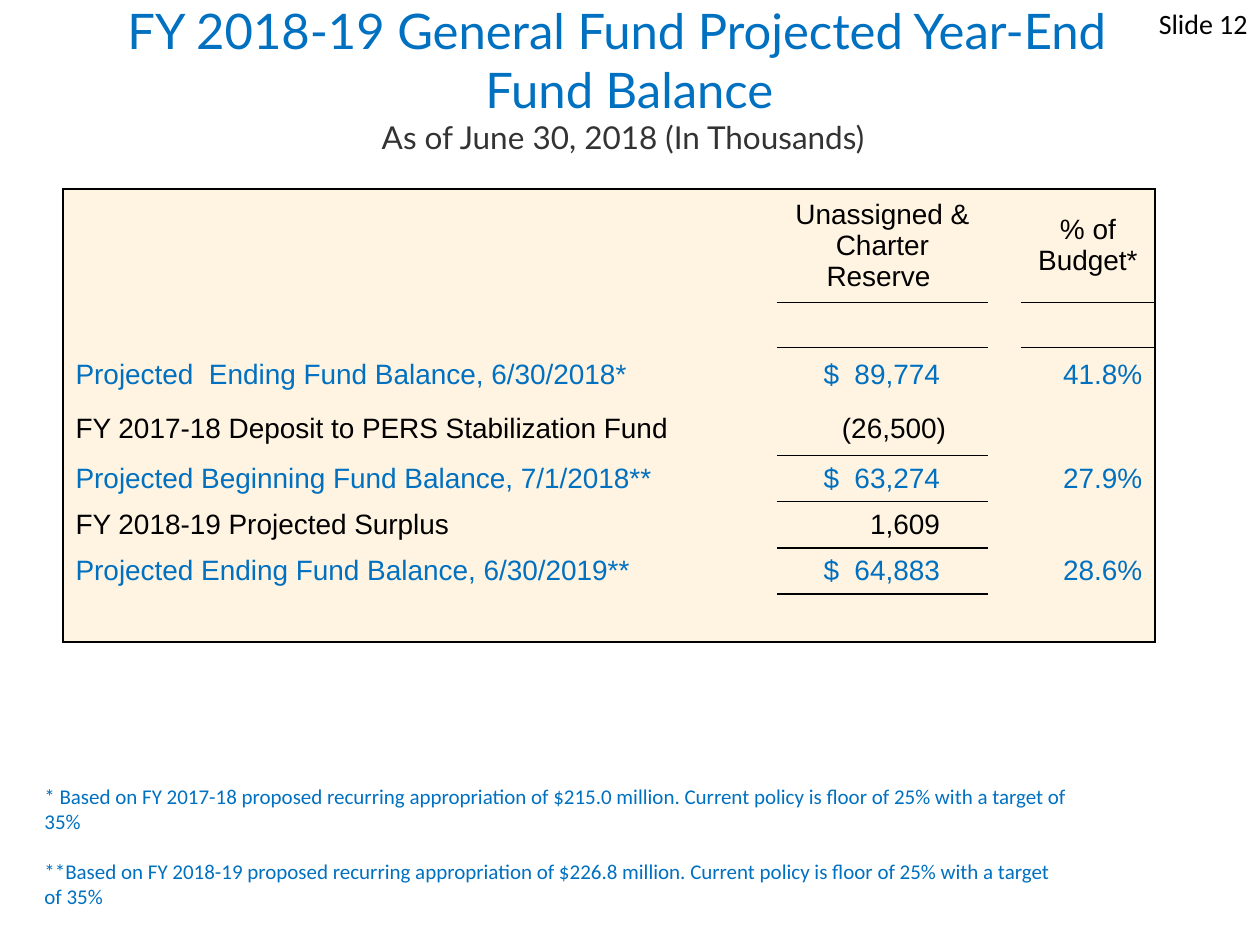
from dataclasses import dataclass

import pptx
import pptx.dml.color
import pptx.enum.text
import pptx.oxml
import pptx.oxml.ns
import pptx.util

EMU_PER_PX = 914400 / 126
BLUE = pptx.dml.color.RGBColor(0x00, 0x70, 0xC0)
BLACK = pptx.dml.color.RGBColor(0x00, 0x00, 0x00)
GRAY = pptx.dml.color.RGBColor(0x33, 0x33, 0x33)
CREAM = pptx.dml.color.RGBColor(0xFF, 0xF3, 0xE1)
NO_TABLE_STYLE = "{2D5ABB26-0587-4C30-8999-92F81FD0307C}"

ALIGN = pptx.enum.text.PP_ALIGN
ANCHOR = pptx.enum.text.MSO_ANCHOR


@dataclass(frozen=True)
class BalanceRow:
    height: int
    label: str = ""
    amount: str = ""
    percent: str = ""
    color: pptx.dml.color.RGBColor = BLACK
    amount_margin: int = 48


COLUMN_WIDTHS = (683, 31, 211, 33, 134)
AMOUNT_COLUMN, PERCENT_COLUMN = 2, 4
BALANCE_ROWS = (
    BalanceRow(106, "", "Unassigned & Charter Reserve ", "% of Budget*"),
    BalanceRow(45),
    BalanceRow(54, "Projected  Ending Fund Balance, 6/30/2018*", "$  89,774", "41.8%", BLUE),
    BalanceRow(54, "FY 2017-18 Deposit to PERS Stabilization Fund", "(26,500)", amount_margin=42),
    BalanceRow(44, "Projected Beginning Fund Balance, 7/1/2018**", "$  63,274", "27.9%", BLUE),
    BalanceRow(43, "FY 2018-19 Projected Surplus", "1,609"),
    BalanceRow(44, "Projected Ending Fund Balance, 6/30/2019**", "$  64,883", "28.6%", BLUE),
    BalanceRow(48),
)
# Line width in points below a cell, keyed by row and column
RULES_BELOW = {
    (0, AMOUNT_COLUMN): 1,
    (0, PERCENT_COLUMN): 0.5,
    (3, AMOUNT_COLUMN): 1,
    (5, AMOUNT_COLUMN): 1,
    (6, AMOUNT_COLUMN): 1,
}
FOOTNOTES = (
    "* Based on FY 2017-18 proposed recurring appropriation of $215.0 million. "
    "Current policy is floor of 25% with a target of 35%",
    "**Based on FY 2018-19 proposed recurring appropriation of $226.8 million. "
    "Current policy is floor of 25% with a target of 35%",
)


def px(length: int) -> int:
    return round(length * EMU_PER_PX)


def style_font(font, name: str, size: int, color: pptx.dml.color.RGBColor) -> None:
    font.name = name
    font.size = pptx.util.Pt(size)
    font.color.rgb = color


def add_text_frame(slide, left: int, top: int, width: int, height: int):
    frame = slide.shapes.add_textbox(px(left), px(top), px(width), px(height)).text_frame
    frame.word_wrap = True
    return frame


def add_title(slide) -> None:
    frame = add_text_frame(slide, 35, 10, 1176, 136)
    frame.vertical_anchor = ANCHOR.MIDDLE
    first_line = frame.paragraphs[0]
    first_line.text = "FY 2018-19 General Fund Projected Year-End "
    first_line.alignment = ALIGN.CENTER
    style_font(first_line.font, "Lato", 28, BLUE)

    second_line = frame.add_paragraph()
    second_line.alignment = ALIGN.CENTER
    fund_balance = second_line.add_run()
    fund_balance.text = " Fund Balance"
    style_font(fund_balance.font, "Lato", 28, BLUE)
    second_line.add_line_break()
    as_of_date = second_line.add_run()
    as_of_date.text = "As of June 30, 2018 (In Thousands)"
    style_font(as_of_date.font, "Lato", 18, GRAY)


def set_borders(cell, row: int, column: int) -> None:
    """Draw the table's outline and the rules that touch this cell."""
    last_row, last_column = len(BALANCE_ROWS) - 1, len(COLUMN_WIDTHS) - 1
    widths = {
        "lnL": 1 if column == 0 else 0,
        "lnR": 1 if column == last_column else 0,
        "lnT": 1 if row == 0 else RULES_BELOW.get((row - 1, column), 0),
        "lnB": 1 if row == last_row else RULES_BELOW.get((row, column), 0),
    }
    sides = [(tag, width) for tag, width in widths.items() if width]
    properties = cell._tc.get_or_add_tcPr()
    for position, (tag, width) in enumerate(sides):
        line = pptx.oxml.parse_xml(
            f'<a:{tag} {pptx.oxml.ns.nsdecls("a")} w="{pptx.util.Pt(width)}">'
            f'<a:solidFill><a:srgbClr val="{BLACK}"/></a:solidFill></a:{tag}>'
        )
        properties.insert(position, line)


def fill_cell(cell, text: str, alignment, color: pptx.dml.color.RGBColor) -> None:
    cell.fill.solid()
    cell.fill.fore_color.rgb = CREAM
    cell.vertical_anchor = ANCHOR.MIDDLE
    if not text:
        cell.margin_top = cell.margin_bottom = 0
    paragraph = cell.text_frame.paragraphs[0]
    paragraph.text = text
    paragraph.alignment = alignment
    style_font(paragraph.font, "Arial", 16, color)


def add_balance_table(slide) -> None:
    total_height = sum(row.height for row in BALANCE_ROWS)
    table = slide.shapes.add_table(
        len(BALANCE_ROWS), len(COLUMN_WIDTHS),
        px(63), px(189), px(sum(COLUMN_WIDTHS)), px(total_height),
    ).table
    table.first_row = table.horz_banding = False
    table._tbl.tblPr.find(pptx.oxml.ns.qn("a:tableStyleId")).text = NO_TABLE_STYLE
    for column, width in zip(table.columns, COLUMN_WIDTHS):
        column.width = px(width)

    for row_index, row in enumerate(BALANCE_ROWS):
        table.rows[row_index].height = px(row.height)
        number_alignment = ALIGN.CENTER if row_index == 0 else ALIGN.RIGHT
        texts = (row.label, "", row.amount, "", row.percent)
        for column_index, text in enumerate(texts):
            cell = table.cell(row_index, column_index)
            alignment = ALIGN.LEFT if column_index == 0 else number_alignment
            fill_cell(cell, text, alignment, row.color)
            set_borders(cell, row_index, column_index)
        if row_index > 0:
            table.cell(row_index, AMOUNT_COLUMN).margin_right = px(row.amount_margin)


def add_footnotes(slide) -> None:
    frame = add_text_frame(slide, 32, 777, 1050, 204)
    for index, footnote in enumerate(FOOTNOTES):
        paragraph = frame.add_paragraph() if index else frame.paragraphs[0]
        paragraph.text = footnote
        if index:
            paragraph.space_before = pptx.util.Pt(14.4)
        style_font(paragraph.font, "Calibri", 12, BLUE)


def add_slide_number(slide) -> None:
    paragraph = add_text_frame(slide, 966, 0, 294, 63).paragraphs[0]
    paragraph.text = "Slide 12"
    paragraph.alignment = ALIGN.RIGHT
    style_font(paragraph.font, "Calibri", 16, BLACK)


def main() -> None:
    presentation = pptx.Presentation()
    presentation.slide_width = px(1260)
    presentation.slide_height = px(945)
    slide = presentation.slides.add_slide(presentation.slide_layouts[6])
    add_title(slide)
    add_balance_table(slide)
    add_footnotes(slide)
    add_slide_number(slide)
    presentation.save("out.pptx")


if __name__ == "__main__":
    main()
